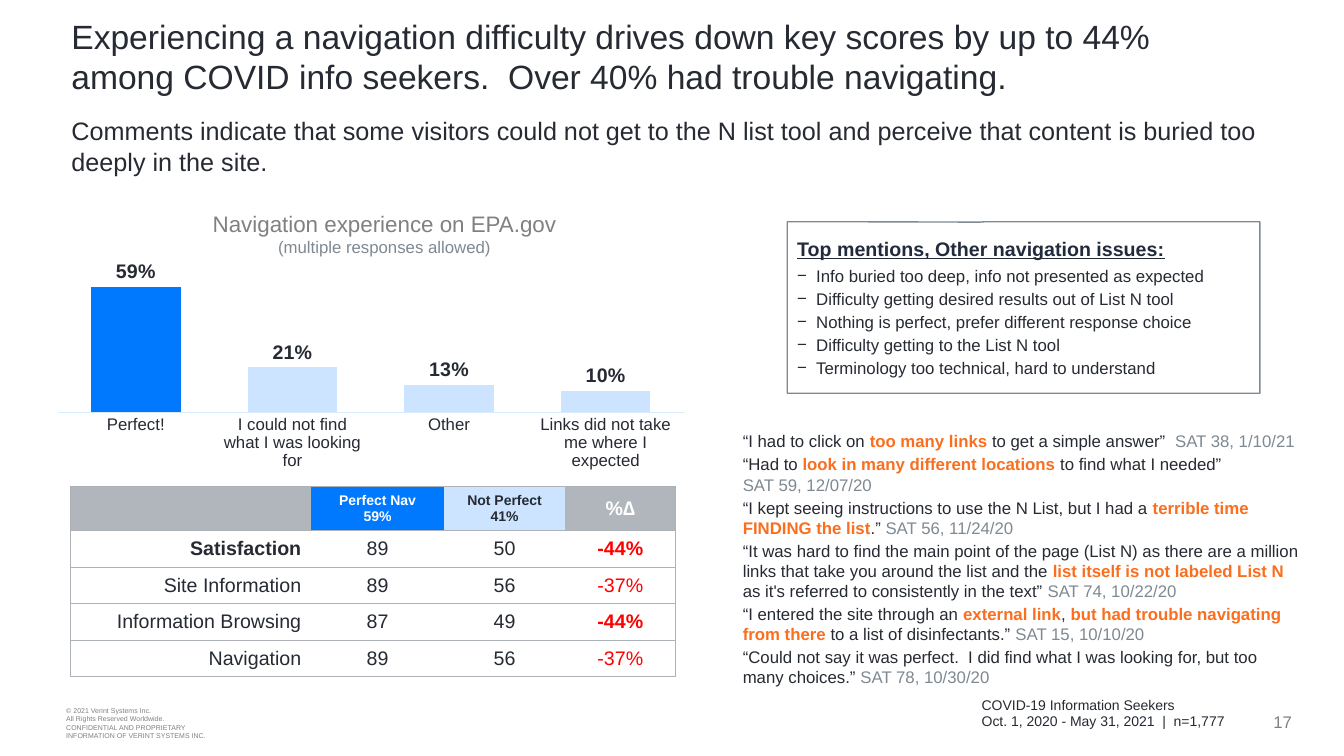
from pptx import Presentation
from pptx.chart.data import CategoryChartData
from pptx.dml.color import RGBColor
from pptx.enum.chart import XL_CHART_TYPE, XL_LABEL_POSITION, XL_TICK_LABEL_POSITION, XL_TICK_MARK
from pptx.enum.shapes import MSO_SHAPE
from pptx.enum.text import MSO_ANCHOR, PP_ALIGN
from pptx.oxml.ns import qn
from pptx.util import Cm, Pt
from lxml.etree import SubElement

INK = RGBColor(0x26, 0x2A, 0x32)
NAVY = RGBColor(0x22, 0x2B, 0x3C)
GRAY = RGBColor(0x80, 0x80, 0x80)
SLATE = RGBColor(0x7F, 0x89, 0x91)
HEADER_GRAY = RGBColor(0xB0, 0xB6, 0xBB)
RULE_GRAY = RGBColor(0xAC, 0xB2, 0xB7)
BLUE = RGBColor(0x00, 0x79, 0xFF)
PALE_BLUE = RGBColor(0xCC, 0xE4, 0xFF)
AXIS_BLUE = RGBColor(0xD9, 0xEB, 0xFF)
ORANGE = RGBColor(0xFA, 0x6E, 0x1E)
RED = RGBColor(0xFF, 0x00, 0x00)
WHITE = RGBColor(0xFF, 0xFF, 0xFF)

PERCENT = r"0%;\(0%\)"
NAVIGATION = {
    "Perfect!": 0.59,
    "I could not find what I was looking for": 0.21,
    "Other": 0.13,
    "Links did not take me where I expected": 0.10,
}
HEADERS = [("", HEADER_GRAY, INK, 10), ("Perfect Nav\n59%", BLUE, WHITE, 10),
           ("Not Perfect\n41%", PALE_BLUE, INK, 10), ("%∆", HEADER_GRAY, WHITE, 14)]
SCORES = [
    ("Satisfaction", "89", "50", "-44%"),
    ("Site Information", "89", "56", "-37%"),
    ("Information Browsing", "87", "49", "-44%"),
    ("Navigation", "89", "56", "-37%"),
]
ISSUES = [
    "Info buried too deep, info not presented as expected",
    "Difficulty getting desired results out of List N tool",
    "Nothing is perfect, prefer different response choice",
    "Difficulty getting to the List N tool",
    "Terminology too technical, hard to understand",
]
# Each quote is a space after and its runs: * marks an emphasis, # a source.
QUOTES = [
    (2, ["“I had to click on ", "*too many links ", "to get a simple answer”  ", "#SAT 38, 1/10/21"]),
    (0, ["“Had to ", "*look in many different locations ", "to find what I needed”"]),
    (2, ["#SAT 59, 12/07/20"]),
    (2, ["“I kept seeing instructions to use the N List, but I had a ",
         "*terrible time FINDING the list", ".” ", "#SAT 56, 11/24/20"]),
    (2, ["“It was hard to find the main point of the page (List N) as there are a million "
         "links that take you around the list and the ", "*list itself is not labeled List N ",
         "as it's referred to consistently in the text” ", "#SAT 74, 10/22/20"]),
    (2, ["“I entered the site through an ", "*external link", ", ",
         "*but had trouble navigating from there ", "to a list of disinfectants.” ",
         "#SAT 15, 10/10/20"]),
    (0, ["“Could not say it was perfect.  I did find what I was looking for, but too many choices.” ",
         "#SAT 78, 10/30/20"]),
]


class SlideBuilder:
    def __init__(self, slide, font_name="Arial"):
        self.slide = slide
        self.font_name = font_name

    def style(self, font, size, color, bold=False):
        font.name = self.font_name
        font.size = Pt(size)
        font.color.rgb = color
        font.bold = bold

    def run(self, paragraph, text, size, color, bold=False):
        run = paragraph.add_run()
        run.text = text
        self.style(run.font, size, color, bold)
        return run

    def paragraph(self, frame, align=PP_ALIGN.LEFT, after=0):
        """Use the frame's empty first paragraph, or append one."""
        first = frame.paragraphs[0]
        paragraph = frame.add_paragraph() if first.runs else first
        paragraph.alignment = align
        paragraph.space_after = Pt(after)
        return paragraph

    def lines(self, frame, text, size, color, bold=False, align=PP_ALIGN.LEFT):
        for line in text.split("\n"):
            self.run(self.paragraph(frame, align), line, size, color, bold)

    def text_box(self, left, top, width, height, anchor=MSO_ANCHOR.TOP):
        frame = self.slide.shapes.add_textbox(Cm(left), Cm(top), Cm(width), Cm(height)).text_frame
        frame.word_wrap = True
        frame.vertical_anchor = anchor
        return frame

    def column_chart(self, left, top, width, height, values):
        data = CategoryChartData(number_format=PERCENT)
        data.categories = values.keys()
        data.add_series("Series 1", values.values())
        chart = self.slide.shapes.add_chart(
            XL_CHART_TYPE.COLUMN_CLUSTERED, Cm(left), Cm(top), Cm(width), Cm(height), data).chart
        chart.has_legend = chart.has_title = False
        self.style(chart.font, 12, INK)

        category_axis, value_axis = chart.category_axis, chart.value_axis
        for axis in (category_axis, value_axis):
            axis.major_tick_mark = axis.minor_tick_mark = XL_TICK_MARK.NONE
            axis.has_major_gridlines = False
        category_axis.format.line.color.rgb = AXIS_BLUE
        category_axis.format.line.width = Pt(0.75)
        value_axis.minimum_scale, value_axis.maximum_scale = 0, 1
        value_axis.tick_label_position = XL_TICK_LABEL_POSITION.NONE
        value_axis.format.line.fill.background()

        plot = chart.plots[0]
        plot.gap_width = 75
        plot.vary_by_categories = False
        plot.has_data_labels = True
        labels = plot.data_labels
        labels.show_value = True
        labels.number_format, labels.number_format_is_linked = PERCENT, False
        labels.position = XL_LABEL_POSITION.OUTSIDE_END
        self.style(labels.font, 14, INK, True)
        series = plot.series[0]
        for filled, color in ((series, PALE_BLUE), (series.points[0], BLUE)):
            filled.format.fill.solid()
            filled.format.fill.fore_color.rgb = color
        self.place_plot(chart, x=0.013, y=0.04, w=0.971, h=0.712)

    def place_plot(self, chart, **fractions):
        plot_area = chart.plots[0]._element.getparent()
        layout = plot_area.find(qn("c:layout"))
        if layout is None:
            layout = SubElement(plot_area, qn("c:layout"))
            plot_area.insert(0, layout)
        manual = SubElement(layout, qn("c:manualLayout"))
        settings = {"layoutTarget": "inner", "xMode": "edge", "yMode": "edge", **fractions}
        for name, value in settings.items():
            SubElement(manual, qn("c:" + name)).set("val", str(value))

    def score_table(self, left, top, column_widths, row_heights):
        columns, rows = len(column_widths), len(row_heights)
        table = self.slide.shapes.add_table(
            rows, columns, Cm(left), Cm(top), Cm(sum(column_widths)), Cm(sum(row_heights))).table
        table.horz_banding = False
        for column, width in zip(table.columns, column_widths):
            column.width = Cm(width)
        for row, height in zip(table.rows, row_heights):
            row.height = Cm(height)
        for index, (text, fill, color, size) in enumerate(HEADERS):
            self.cell(table.cell(0, index), text, fill, size, color, True, PP_ALIGN.CENTER)
        for row, scores in enumerate(SCORES, 1):
            for column, text in enumerate(scores):
                is_change = column == columns - 1
                bold = (column == 0 and row == 1) or text == "-44%"
                align = PP_ALIGN.CENTER if column else PP_ALIGN.RIGHT
                self.cell(table.cell(row, column), text, WHITE, 14,
                          RED if is_change else INK, bold, align)
        for row in range(rows):
            for column in range(columns):
                self.borders(table.cell(row, column), column == 0, column == columns - 1)

    def cell(self, cell, text, fill, size, color, bold, align):
        cell.fill.solid()
        cell.fill.fore_color.rgb = fill
        cell.vertical_anchor = MSO_ANCHOR.MIDDLE
        cell.margin_top = cell.margin_bottom = Cm(0.05)
        self.lines(cell.text_frame, text, size, color, bold, align)

    def borders(self, cell, is_first, is_last):
        """Rule the top and bottom, and the outer sides of the table."""
        properties = cell._tc.get_or_add_tcPr()
        sides = {"lnL": is_first, "lnR": is_last, "lnT": True, "lnB": True}
        for position, (side, ruled) in enumerate(sides.items()):
            line = SubElement(properties, qn("a:" + side), w=str(Pt(0.75)))
            properties.insert(position, line)
            fill = SubElement(line, qn("a:solidFill" if ruled else "a:noFill"))
            if ruled:
                SubElement(fill, qn("a:srgbClr"), val=str(RULE_GRAY))

    def issue_callout(self, left, top, width, height, heading, issues):
        shape = self.slide.shapes.add_shape(
            MSO_SHAPE.RECTANGULAR_CALLOUT, Cm(left), Cm(top), Cm(width), Cm(height))
        shape.adjustments[0], shape.adjustments[1] = -0.092, -0.498
        shape.shadow.inherit = False
        shape.fill.solid()
        shape.fill.fore_color.rgb = WHITE
        shape.line.color.rgb = SLATE
        shape.line.width = Pt(1)
        frame = shape.text_frame
        frame.word_wrap = True
        frame.vertical_anchor = MSO_ANCHOR.MIDDLE
        self.run(self.paragraph(frame, after=4), heading, 14, NAVY, True).font.underline = True
        for issue in issues:
            paragraph = self.paragraph(frame, after=0 if issue == issues[-1] else 2)
            properties = paragraph._p.get_or_add_pPr()
            properties.set("marL", str(Cm(0.48)))
            properties.set("indent", str(-Cm(0.48)))
            SubElement(properties, qn("a:buFont"), typeface=self.font_name)
            SubElement(properties, qn("a:buChar"), char="−")
            self.run(paragraph, issue, 12, INK)

    def quotes(self, frame, quotes):
        marks = {"*": (ORANGE, True), "#": (SLATE, False)}
        for after, parts in quotes:
            paragraph = self.paragraph(frame, after=after)
            for part in parts:
                color, bold = marks.get(part[0], (INK, False))
                self.run(paragraph, part.lstrip("*#"), 12, color, bold)


def main():
    presentation = Presentation()
    presentation.slide_width, presentation.slide_height = Cm(33.87), Cm(19.05)
    builder = SlideBuilder(presentation.slides.add_slide(presentation.slide_layouts[6]))
    middle = MSO_ANCHOR.MIDDLE

    builder.lines(builder.text_box(1.42, 17.63, 6.1, 1.19, middle),
                  "© 2021 Verint Systems Inc.\nAll Rights Reserved Worldwide.\n"
                  "CONFIDENTIAL AND PROPRIETARY\nINFORMATION OF VERINT SYSTEMS INC.", 5, GRAY)
    builder.lines(builder.text_box(1.55, 0.2, 30.48, 2.36, MSO_ANCHOR.BOTTOM),
                  "Experiencing a navigation difficulty drives down key scores by up to 44% "
                  "among COVID info seekers.  Over 40% had trouble navigating.", 24, INK)
    builder.lines(builder.text_box(31.06, 17.6, 1.75, 1.19, middle), "17", 12, GRAY,
                  align=PP_ALIGN.RIGHT)
    builder.lines(builder.text_box(1.55, 2.79, 30.78, 1.8),
                  "Comments indicate that some visitors could not get to the N list tool and "
                  "perceive that content is buried too deeply in the site.", 18, INK)
    builder.score_table(1.78, 12.27, [6.07, 3.33, 3.07, 2.77], [1.1] + [0.92] * len(SCORES))
    sample = builder.text_box(24.49, 17.37, 7.24, 1.19, middle)
    sample.margin_top = sample.margin_bottom = 0
    builder.lines(sample, "COVID-19 Information Seekers\nOct. 1, 2020 - May 31, 2021  |  n=1,777",
                  10, INK)
    builder.column_chart(1.24, 4.72, 16.26, 7.54, NAVIGATION)
    chart_heading = builder.text_box(1.88, 5.16, 15.62, 1.96)
    builder.lines(chart_heading, "Navigation experience on EPA.gov", 16, GRAY,
                  align=PP_ALIGN.CENTER)
    builder.lines(chart_heading, "(multiple responses allowed)", 12, SLATE, align=PP_ALIGN.CENTER)
    builder.issue_callout(19.84, 5.59, 11.91, 4.32, "Top mentions, Other navigation issues:", ISSUES)
    builder.quotes(builder.text_box(18.47, 10.74, 14.6, 6.83), QUOTES)
    presentation.save("out.pptx")


if __name__ == "__main__":
    main()
